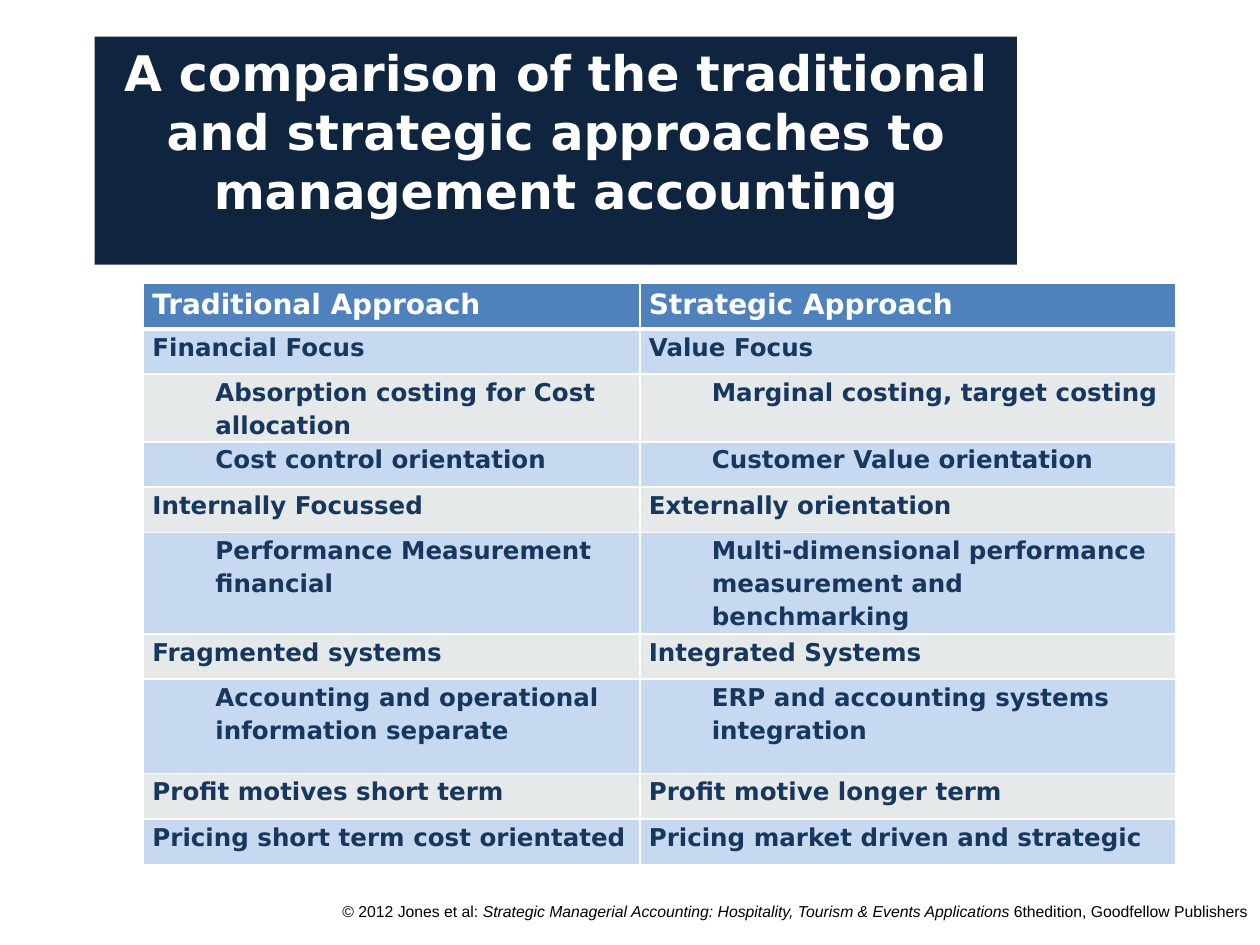
"""Build a slide comparing traditional and strategic management accounting."""
from dataclasses import dataclass

from lxml import etree
from pptx import Presentation
from pptx.dml.color import RGBColor
from pptx.enum.shapes import MSO_SHAPE
from pptx.enum.text import MSO_ANCHOR, PP_ALIGN
from pptx.oxml.ns import qn
from pptx.util import Inches, Pt

RECTANGLE = MSO_SHAPE.RECTANGLE
TOP = MSO_ANCHOR.TOP
CENTER, RIGHT = PP_ALIGN.CENTER, PP_ALIGN.RIGHT

WHITE, BLACK, NAVY = "FFFFFF", "000000", "0F243E"
HEADER_FILL, BODY_TEXT = "4F81BD", "17375E"
BAND_FILLS = ("E5E9E9", "C6D9F1")
TITLE_FORMAT = {"name": "DejaVu Sans", "size": Pt(28), "bold": True}
HEADER_FORMAT = TITLE_FORMAT | {"size": Pt(16)}
BODY_FORMAT = TITLE_FORMAT | {"size": Pt(14)}
FOOTER_FORMAT = {"name": "Arial", "size": Pt(9)}
CELL_MARGINS = {
    "margin_left": Inches(0.07), "margin_right": Inches(0.07),
    "margin_top": Inches(0), "margin_bottom": Inches(0),
}
COLUMN_WIDTHS = (3.94, 4.25)


@dataclass(frozen=True)
class Comparison:
    """One table row: both approaches, and how the row is set."""
    traditional: str
    strategic: str
    detail: bool = False
    height: float = 0.36


COMPARISONS = (
    Comparison("Traditional Approach", "Strategic Approach"),
    Comparison("Financial Focus", "Value Focus"),
    Comparison("Absorption costing for Cost allocation",
               "Marginal costing, target costing", True),
    Comparison("Cost control orientation", "Customer Value orientation", True),
    Comparison("Internally Focussed", "Externally orientation"),
    Comparison("Performance Measurement financial",
               "Multi-dimensional performance measurement and benchmarking", True, 0.75),
    Comparison("Fragmented systems", "Integrated Systems"),
    Comparison("Accounting and operational information separate",
               "ERP and accounting systems integration", True, 0.75),
    Comparison("Profit motives short term", "Profit motive longer term"),
    Comparison("Pricing short term cost orientated", "Pricing market driven and strategic"),
)


def color(value: str) -> RGBColor:
    """Turn a hex string into a colour."""
    return RGBColor.from_string(value)


def apply(target, values: dict) -> None:
    """Set each named attribute on the target."""
    for name, value in values.items():
        setattr(target, name, value)


def add_span(para, text: str, font_format: dict, hex_color: str) -> None:
    """Add one formatted run to a paragraph."""
    span = para.add_run()
    span.text = text
    apply(span.font, font_format)
    span.font.color.rgb = color(hex_color)


def add_title(page) -> None:
    """Draw the dark title panel."""
    box = page.shapes.add_shape(RECTANGLE, Inches(0.75), Inches(0.29), Inches(7.32), Inches(1.81))
    box.shadow.inherit = False
    box.fill.solid()
    box.fill.fore_color.rgb = color(NAVY)
    box.line.fill.background()
    apply(box.text_frame, {"word_wrap": True, "vertical_anchor": TOP})
    para = box.text_frame.paragraphs[0]
    para.alignment = CENTER
    add_span(para, "A comparison of the traditional and strategic approaches to "
             "management accounting", TITLE_FORMAT, WHITE)


def add_borders(cell, bottom: float) -> None:
    """Give a cell white borders with the given bottom and top widths."""
    properties = cell._tc.get_or_add_tcPr()
    for tag, width in (("a:lnL", 1), ("a:lnR", 1), ("a:lnT", 1), ("a:lnB", bottom)):
        line = etree.SubElement(properties, qn(tag), w=str(Pt(width)))
        fill = etree.SubElement(line, qn("a:solidFill"))
        etree.SubElement(fill, qn("a:srgbClr"), val=WHITE)


def fill_cell(cell, text: str, index: int, detail: bool) -> None:
    """Write and format one table cell."""
    header = index == 0
    apply(cell, CELL_MARGINS)
    add_borders(cell, 3 if header else 1)
    cell.fill.solid()
    cell.fill.fore_color.rgb = color(HEADER_FILL if header else BAND_FILLS[index % 2])
    para = cell.text_frame.paragraphs[0]
    para.line_spacing = 1.15
    if detail:
        apply_indent = {"marL": str(Inches(0.5)), "indent": "0"}
        para._p.get_or_add_pPr().attrib.update(apply_indent)
    add_span(para, text, HEADER_FORMAT if header else BODY_FORMAT,
             WHITE if header else BODY_TEXT)


def add_comparison_table(page) -> None:
    """Draw the table of both approaches."""
    height = sum(comparison.height for comparison in COMPARISONS)
    table = page.shapes.add_table(
        len(COMPARISONS), len(COLUMN_WIDTHS), Inches(1.14), Inches(2.25),
        Inches(sum(COLUMN_WIDTHS)), Inches(height)).table
    for column, width in zip(table.columns, COLUMN_WIDTHS):
        column.width = Inches(width)
    for index, comparison in enumerate(COMPARISONS):
        table.rows[index].height = Inches(comparison.height)
        for place, text in enumerate((comparison.traditional, comparison.strategic)):
            fill_cell(table.cell(index, place), text, index, comparison.detail)


def add_footer(page) -> None:
    """Write the copyright line."""
    box = page.shapes.add_textbox(Inches(2.23), Inches(7.11), Inches(7.77), Inches(0.39))
    box.text_frame.word_wrap = True
    para = box.text_frame.paragraphs[0]
    para.alignment = RIGHT
    for text, italic in (
        ("© 2012 Jones et al: ", False),
        ("Strategic Managerial Accounting: Hospitality, Tourism & Events Applications ", True),
        ("6thedition, Goodfellow Publishers", False),
    ):
        add_span(para, text, FOOTER_FORMAT | {"italic": italic}, BLACK)


def main() -> None:
    """Build and save the deck."""
    deck = Presentation()
    apply(deck, {"slide_width": Inches(10), "slide_height": Inches(7.5)})
    page = deck.slides.add_slide(deck.slide_layouts[6])
    add_footer(page)
    add_title(page)
    add_comparison_table(page)
    deck.save("out.pptx")


if __name__ == "__main__":
    main()
